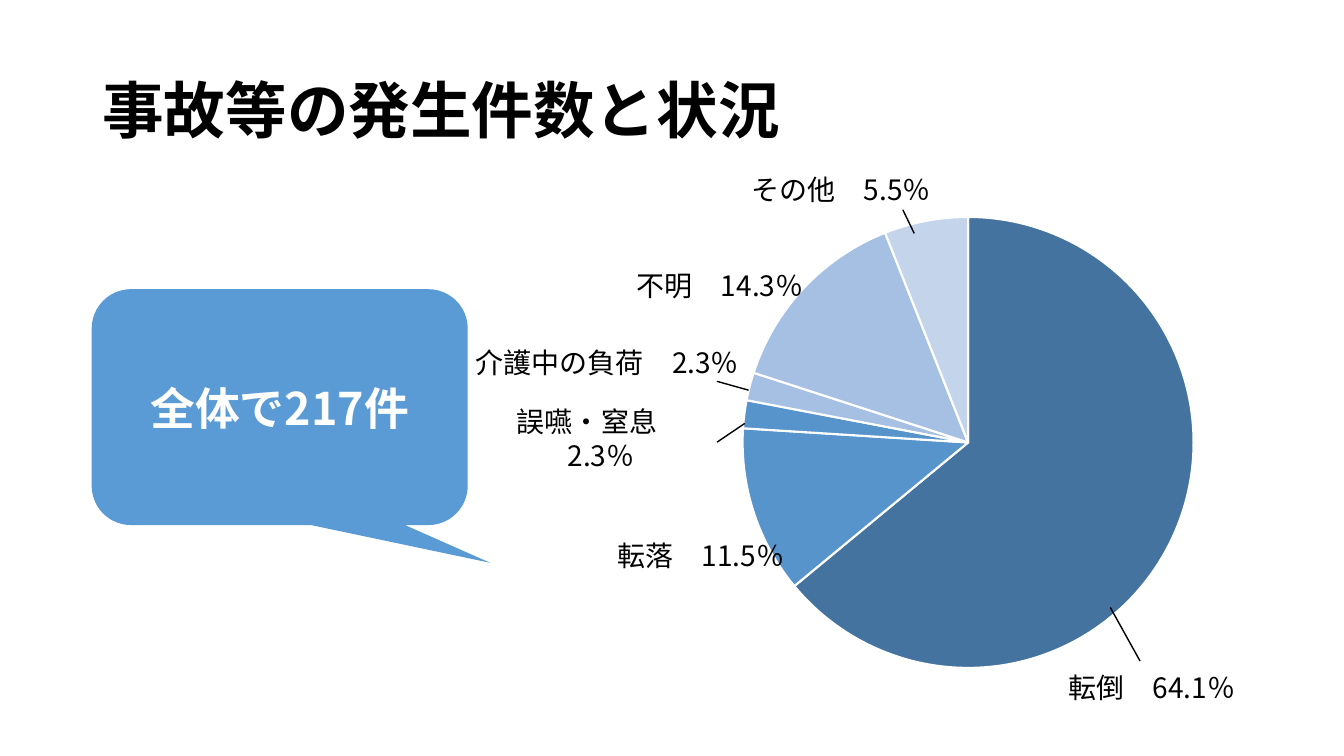
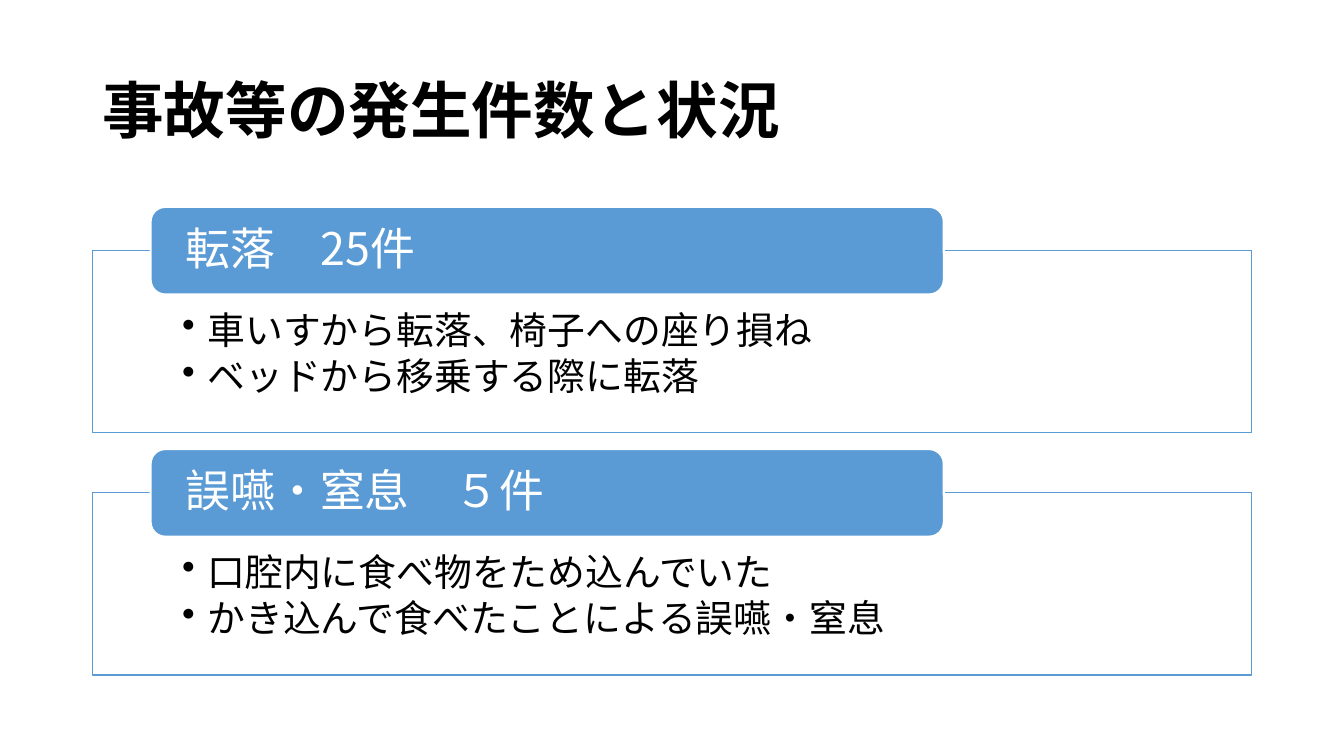
from pptx import Presentation
from pptx.chart.data import CategoryChartData
from pptx.dml.color import RGBColor
from pptx.enum.chart import XL_CHART_TYPE as ChartType
from pptx.enum.shapes import MSO_SHAPE as Preset
from pptx.enum.text import MSO_ANCHOR as Anchor, PP_ALIGN as Align
from pptx.oxml import parse_xml
from pptx.oxml.ns import nsdecls
from pptx.util import Pt

FONT = "Noto Sans CJK JP"
COLORS = {
    "black": "000000",
    "white": "FFFFFF",
    "blue": "5B9BD5",
    "navy": "43739E",
    "mid": "5794CB",
    "light": "A5C0E3",
    "pale": "C4D5EB",
}
TITLE = "事故等の発生件数と状況"


def add_box(page, bounds, preset=None, fill=None, line=None, width=1, anchor=Anchor.MIDDLE):
    lengths = [Pt(value) for value in bounds]
    if preset is None:
        box = page.shapes.add_textbox(*lengths)
    else:
        box = page.shapes.add_shape(preset, *lengths)
        box.shadow.inherit = False
        if fill:
            box.fill.solid()
            box.fill.fore_color.rgb = RGBColor.from_string(COLORS[fill])
        else:
            box.fill.background()
        if line:
            box.line.color.rgb = RGBColor.from_string(COLORS[line])
            box.line.width = Pt(width)
        else:
            box.line.fill.background()
    box.text_frame.word_wrap = True
    box.text_frame.vertical_anchor = anchor
    return box


def add_text(para, text, size, color="black", bold=False, align=Align.LEFT, spacing=1.0):
    para.alignment = align
    para.line_spacing = spacing
    span = para.add_run()
    span.text = text
    span.font.name = FONT
    span.font.size = Pt(size)
    span.font.bold = bold
    span.font.color.rgb = RGBColor.from_string(COLORS[color])
    span.font._element.append(parse_xml(f'<a:ea {nsdecls("a")} typeface="{FONT}"/>'))


deck = Presentation()
deck.slide_width, deck.slide_height = Pt(960), Pt(540)
pages = [deck.slides.add_slide(deck.slide_layouts[6]) for _ in range(2)]
for page in pages:
    box = add_box(page, (66, 28.8, 828, 104.4))
    add_text(box.text_frame.paragraphs[0], TITLE, 44, bold=True, spacing=0.9)

chart_page, list_page = pages

slices = [
    ("転倒", 64, "navy"),
    ("転落", 12, "mid"),
    ("誤嚥・窒息", 2, "mid"),
    ("介護中の負荷", 2, "light"),
    ("不明", 14, "light"),
    ("その他", 6, "pale"),
]
data = CategoryChartData()
data.categories = [name for name, _, _ in slices]
data.add_series("割合", [value for _, value, _ in slices])
chart = chart_page.shapes.add_chart(
    ChartType.PIE, Pt(489), Pt(144.7), Pt(405), Pt(342.7), data
).chart
chart.has_legend = False
chart.has_title = False
chart.font.name = FONT
chart.font.size = Pt(10)
chart.font.color.rgb = RGBColor.from_string(COLORS["black"])
plot = chart.plots[0]
plot.vary_by_categories = True
for index, (_, _, color) in enumerate(slices):
    style = plot.series[0].points[index].format
    style.fill.solid()
    style.fill.fore_color.rgb = RGBColor.from_string(COLORS[color])
    style.line.color.rgb = RGBColor.from_string(COLORS["white"])
    style.line.width = Pt(1.5)
plot_area = chart._chartSpace.chart.plotArea
for layout in plot_area.findall("{*}layout"):
    plot_area.remove(layout)
plot_area.insert(0, parse_xml(
    f'<c:layout {nsdecls("c")}><c:manualLayout><c:layoutTarget val="inner"/>'
    '<c:xMode val="edge"/><c:yMode val="edge"/><c:x val="0.1"/><c:y val="0.03"/>'
    '<c:w val="0.8"/><c:h val="0.94"/></c:manualLayout></c:layout>'
))

bubble = add_box(
    chart_page, (65.5, 206.6, 268.6, 168.5), Preset.ROUNDED_RECTANGULAR_CALLOUT, "blue"
)
bubble.adjustments[0] = 0.56
bubble.adjustments[1] = 0.66
add_text(bubble.text_frame.paragraphs[0], "全体で217件", 32, "white", True, Align.CENTER)

labels = [
    ("転倒　64.1％", (752, 471, 141.8, 40.3), (0.03, 0.44, -0.92, 0.29)),
    ("誤嚥・窒息　2.3％", (339.4, 290.9, 180, 44.6), (0.56, 0.96, 0.26, 1.07)),
    ("介護中の負荷　2.3％", (330.8, 240.2, 206, 37.4), (0.86, 0.88, 1.03, 0.99)),
    ("その他　5.5％", (519.1, 115.2, 163.4, 40.3), (0.86, 0.77, 1.28, 0.82)),
    ("不明　14.3％", (447.8, 188.6, 139, 31.7), None),
    ("転落　11.5％", (434, 381.3, 139, 31.7), None),
]
for text, bounds, leader in labels:
    if leader:
        box = add_box(chart_page, bounds, Preset.LINE_CALLOUT_1_NO_BORDER, line="black")
        for index, value in enumerate(leader):
            box.adjustments[index] = value
        align = Align.CENTER
    else:
        box = add_box(chart_page, bounds, anchor=Anchor.TOP)
        align = Align.LEFT
    add_text(box.text_frame.paragraphs[0], text, 20, align=align)

panels = [
    ("転落　25件", ["車いすから転落、椅子への座り損ね", "ベッドから移乗する際に転落"]),
    ("誤嚥・窒息　５件", ["口腔内に食べ物をため込んでいた", "かき込んで食べたことによる誤嚥・窒息"]),
]
for row, (heading, items) in enumerate(panels):
    top = 178.8 + row * 173
    panel = add_box(
        list_page, (66, top, 828, 130.4), Preset.RECTANGLE, "white", "blue", anchor=Anchor.TOP
    )
    frame = panel.text_frame
    frame.margin_left = frame.margin_right = Pt(64.2)
    frame.margin_top, frame.margin_bottom = Pt(43.8), Pt(15)
    for index, item in enumerate(items):
        para = frame.add_paragraph() if index else frame.paragraphs[0]
        add_text(para, item, 27, spacing=0.9)
        para.space_after = Pt(4)
        props = para._p.get_or_add_pPr()
        props.set("marL", str(Pt(18)))
        props.set("indent", str(-Pt(18)))
        props.append(parse_xml(f'<a:buChar {nsdecls("a")} char="•"/>'))

    tab = add_box(
        list_page, (107.6, top - 31, 566.6, 62.6), Preset.ROUNDED_RECTANGLE, "blue", "white", 1.5
    )
    frame = tab.text_frame
    frame.margin_left = frame.margin_right = Pt(22)
    frame.margin_top = frame.margin_bottom = 0
    add_text(frame.paragraphs[0], heading, 32, "white", spacing=0.9)

deck.save("out.pptx")
